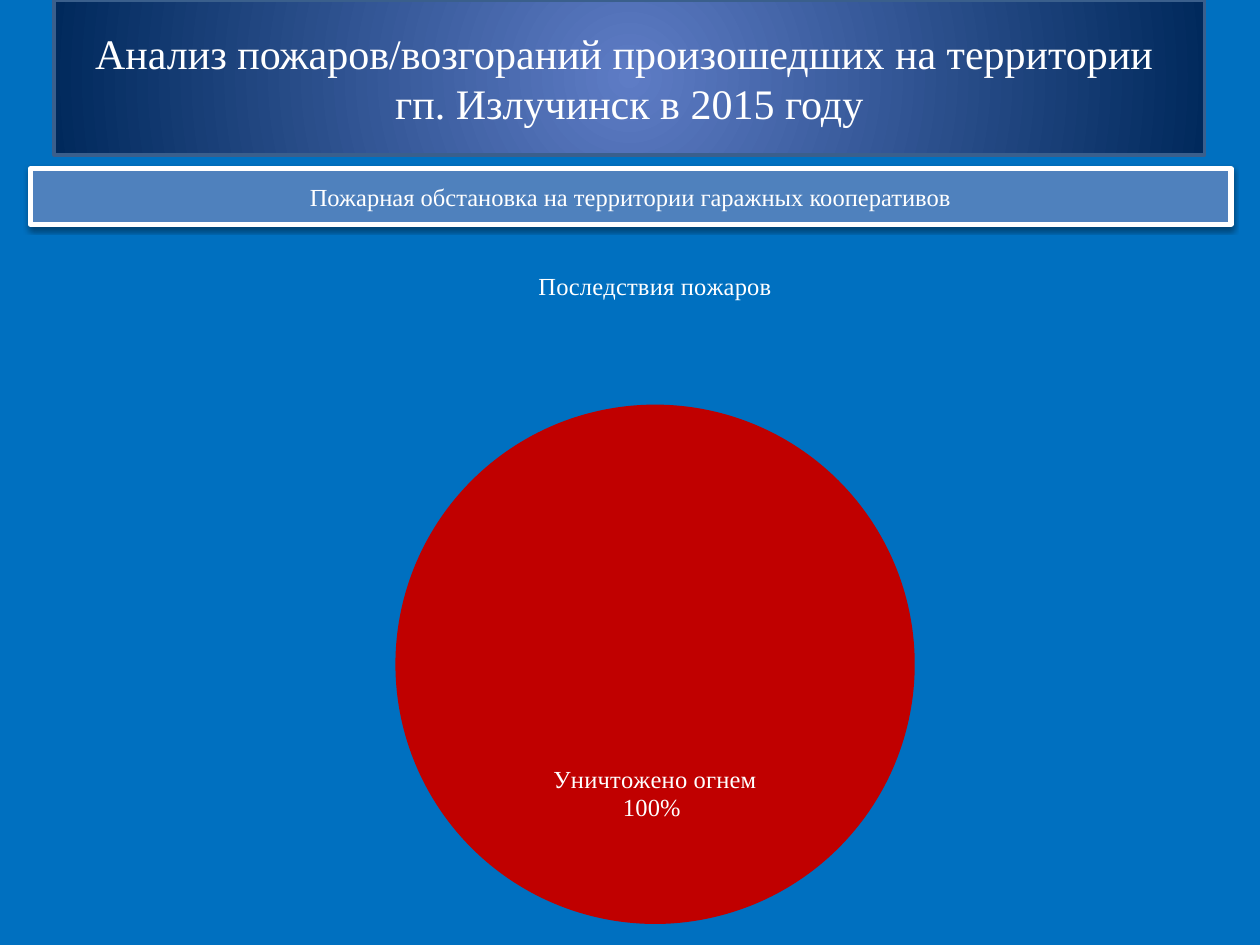
from lxml import etree
from pptx import Presentation
from pptx import util as u
from pptx.chart.data import CategoryChartData
from pptx.dml.color import RGBColor
from pptx.enum import chart as ch, shapes, text
from pptx.oxml import parse_xml
from pptx.oxml.ns import nsdecls, qn

FONT = "Times New Roman"
WHITE = "FFFFFF"


def rgb(value):
    return RGBColor.from_string(value)


def style_font(font, size):
    font.name = FONT
    font.size = u.Pt(size)
    font.bold = False
    font.color.rgb = rgb(WHITE)


def place(s, left, top, width, height):
    s.left, s.top, s.width, s.height = map(u.Inches, (left, top, width, height))


def set_line(s, color, width):
    s.line.color.rgb = rgb(color)
    s.line.width = u.Pt(width)


def write_lines(s, lines, size):
    tf = s.text_frame
    tf.word_wrap = True
    tf.auto_size = text.MSO_AUTO_SIZE.NONE
    tf.vertical_anchor = text.MSO_ANCHOR.MIDDLE
    for i, line in enumerate(lines):
        p = tf.add_paragraph() if i else tf.paragraphs[0]
        p.alignment = text.PP_ALIGN.CENTER
        r = p.add_run()
        r.text = line
        style_font(r.font, size)


def fill_radial(s, inner, outer):
    stops = "".join(
        f'<a:gs pos="{pos}"><a:srgbClr val="{color}"/></a:gs>'
        for pos, color in ((0, inner), (100000, outer)))
    grad = parse_xml(
        f'<a:gradFill {nsdecls("a")} rotWithShape="1"><a:gsLst>{stops}</a:gsLst>'
        '<a:path path="circle"><a:fillToRect l="50000" t="50000" r="50000" b="50000"/>'
        '</a:path></a:gradFill>')
    s._element.spPr.find(qn("a:prstGeom")).addnext(grad)


def drop_shadow(s, blur, dist, alpha):
    s.shadow.inherit = False
    s._element.spPr.find(qn("a:effectLst")).append(parse_xml(
        f'<a:outerShdw {nsdecls("a")} blurRad="{u.Pt(blur)}" dist="{u.Pt(dist)}" '
        'dir="5400000" rotWithShape="0"><a:srgbClr val="000000">'
        f'<a:alpha val="{alpha * 1000}"/></a:srgbClr></a:outerShdw>'))


def add_title(slide):
    s = slide.shapes.title
    place(s, 0.43, 0, 9.13, 1.23)
    s._element.spPr.append(parse_xml(
        f'<a:prstGeom {nsdecls("a")} prst="rect"><a:avLst/></a:prstGeom>'))
    fill_radial(s, "5E7CC5", "00295C")
    set_line(s, "3A5F8C", 2)
    write_lines(s, ["Анализ пожаров/возгораний произошедших на территории ",
                    "гп. Излучинск в 2015 году"], 24)


def add_subtitle_band(slide):
    s = slide.shapes.add_shape(
        shapes.MSO_SHAPE.RECTANGLE,
        *map(u.Inches, (0.24, 1.34, 9.53, 0.44)))
    s.fill.solid()
    s.fill.fore_color.rgb = rgb("4F81BD")
    set_line(s, WHITE, 3)
    drop_shadow(s, 3.1, 1.6, 38)
    write_lines(s, ["Пожарная обстановка на территории гаражных кооперативов"], 14)


def set_plot_layout(chart, x, y, w, h):
    plot_area = chart._chartSpace.chart.plotArea
    for old in plot_area.findall(qn("c:layout")):
        plot_area.remove(old)
    values = (("layoutTarget", "inner"), ("xMode", "edge"), ("yMode", "edge"),
              ("x", x), ("y", y), ("w", w), ("h", h))
    layout = etree.Element(qn("c:layout"))
    manual = etree.SubElement(layout, qn("c:manualLayout"))
    for name, value in values:
        etree.SubElement(manual, qn(f"c:{name}")).set("val", str(value))
    plot_area.insert(0, layout)


def explode(series, percent):
    explosion = etree.Element(qn("c:explosion"))
    explosion.set("val", str(percent))
    series._element.find(qn("c:dPt")).addprevious(explosion)


def add_consequences_pie(slide):
    data = CategoryChartData()
    data.categories = ["уничтожен"]
    data.add_series("Series 1", [100])
    chart = slide.shapes.add_chart(
        ch.XL_CHART_TYPE.PIE, *map(u.Inches, (1.46, 1.94, 7.48, 5.8)), data).chart
    style_font(chart.font, 12)
    chart.has_legend = False
    chart.has_title = True
    r = chart.chart_title.text_frame.paragraphs[0].add_run()
    r.text = "Последствия пожаров"
    style_font(r.font, 14)
    set_plot_layout(chart, 0, 0.07, 1, 0.86)

    plot = chart.plots[0]
    plot.vary_by_categories = True
    series = plot.series[0]
    point = series.points[0]
    point.format.fill.solid()
    point.format.fill.fore_color.rgb = rgb("C00000")
    explode(series, 21)

    labels = series.data_labels
    labels.show_percentage = labels.show_category_name = True
    labels.show_value = False
    style_font(labels.font, 14)
    label = point.data_label
    r = label.text_frame.paragraphs[0].add_run()
    r.text = "Уничтожено огнем 100% "
    style_font(r.font, 14)
    label.position = ch.XL_LABEL_POSITION.CENTER


def main():
    prs = Presentation()
    prs.slide_width, prs.slide_height = u.Inches(10), u.Inches(7.5)
    slide = prs.slides.add_slide(prs.slide_layouts.get_by_name("Title Only"))
    slide.background.fill.solid()
    slide.background.fill.fore_color.rgb = rgb("0070C0")
    add_title(slide)
    add_subtitle_band(slide)
    add_consequences_pie(slide)
    prs.save("out.pptx")


if __name__ == "__main__":
    main()
